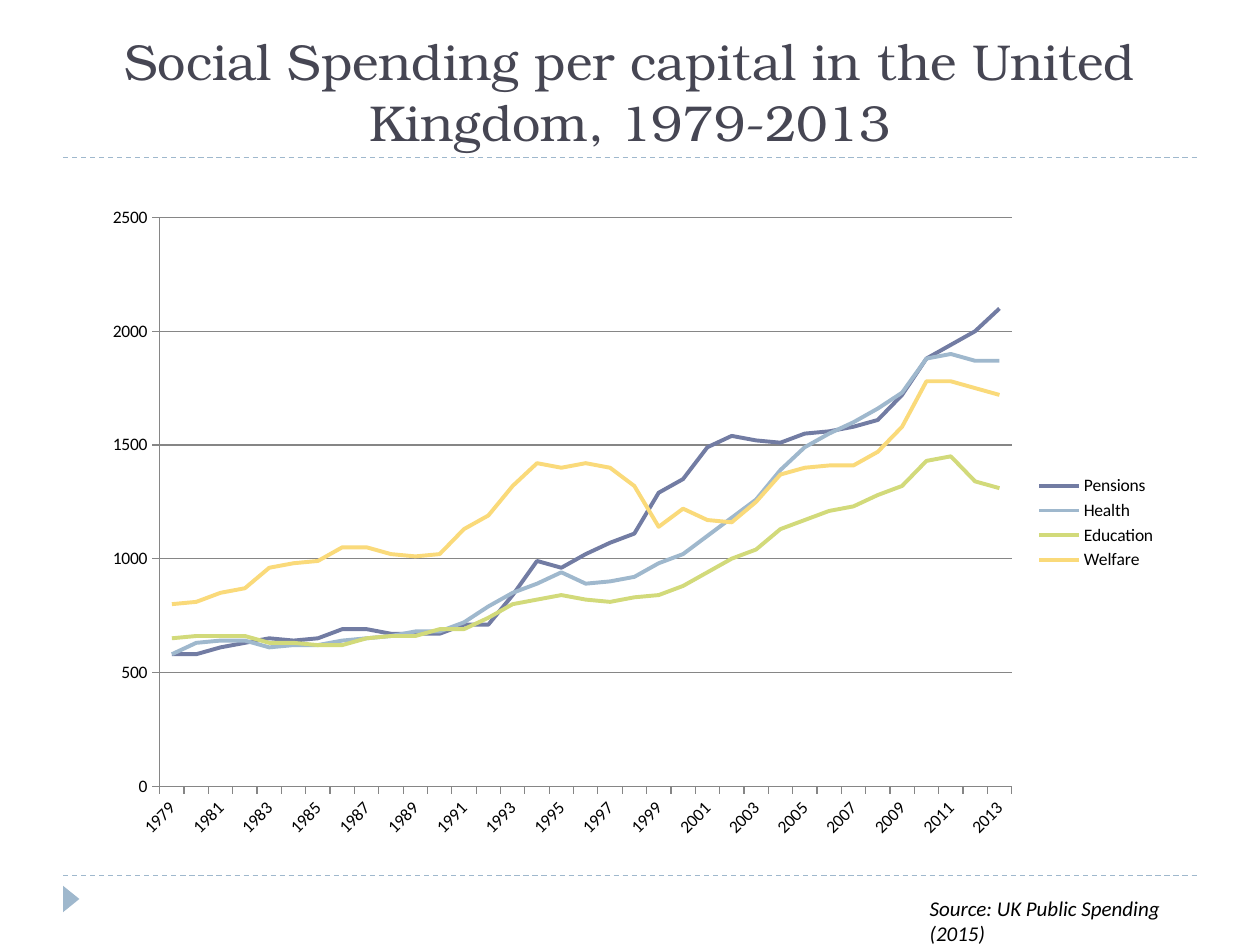
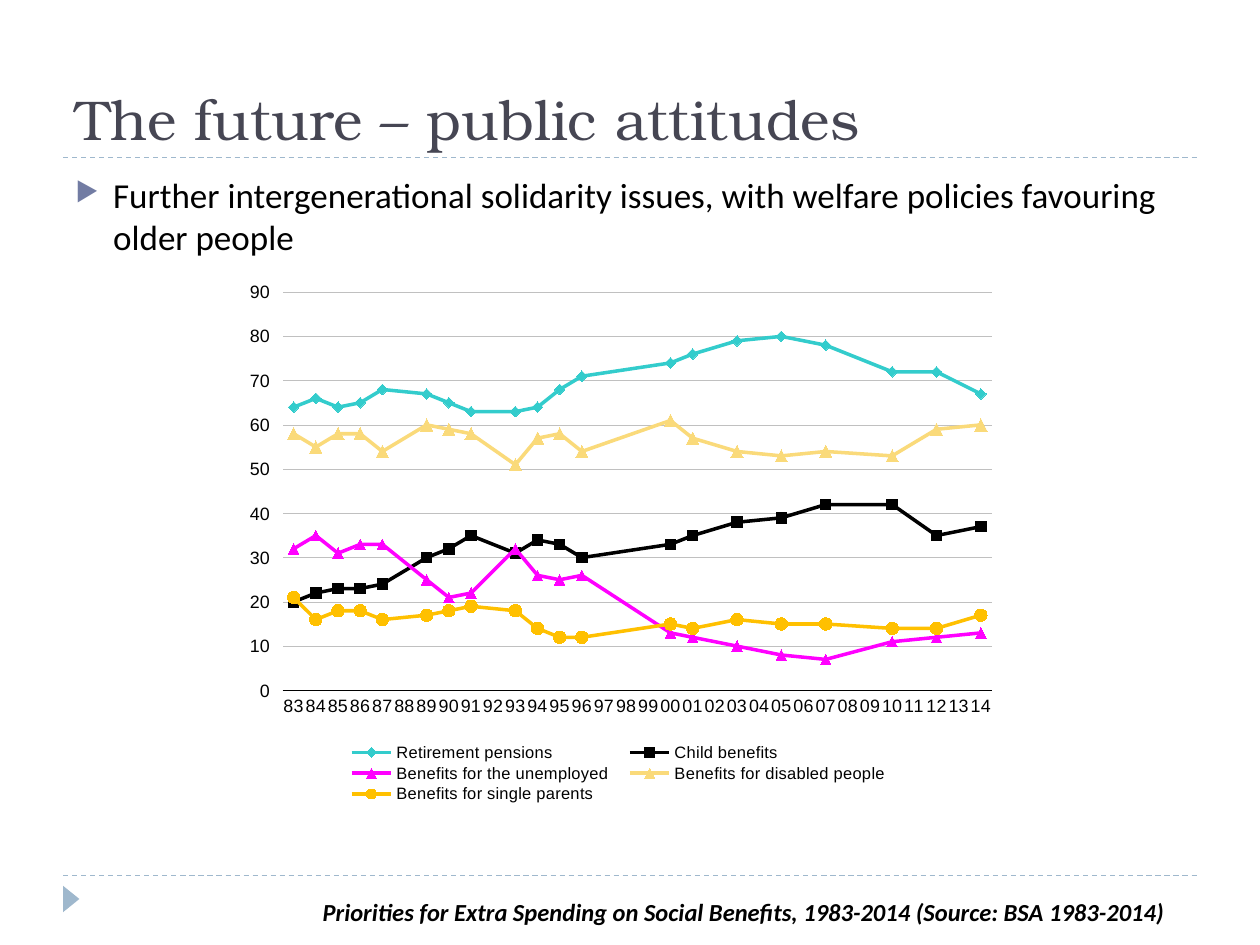
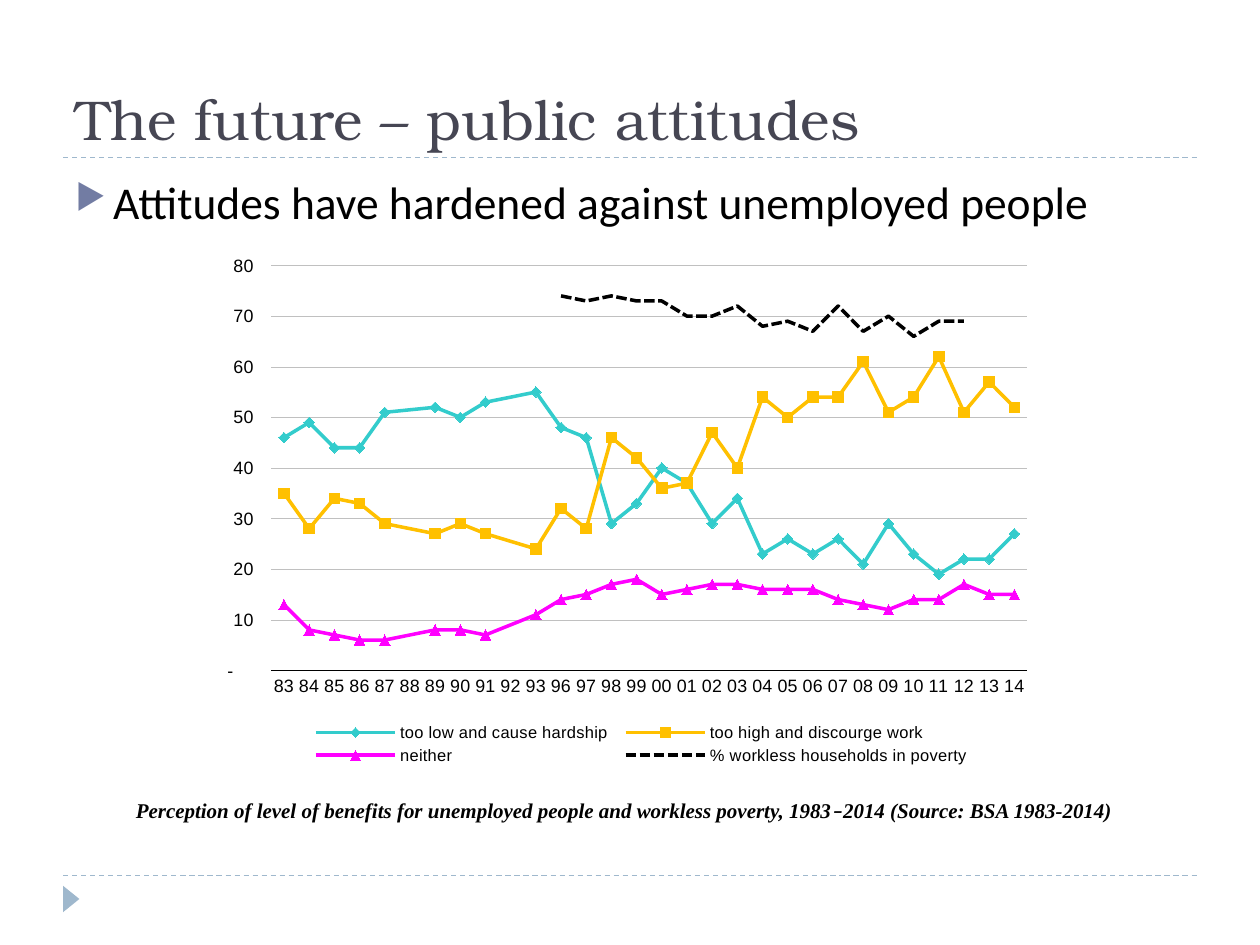
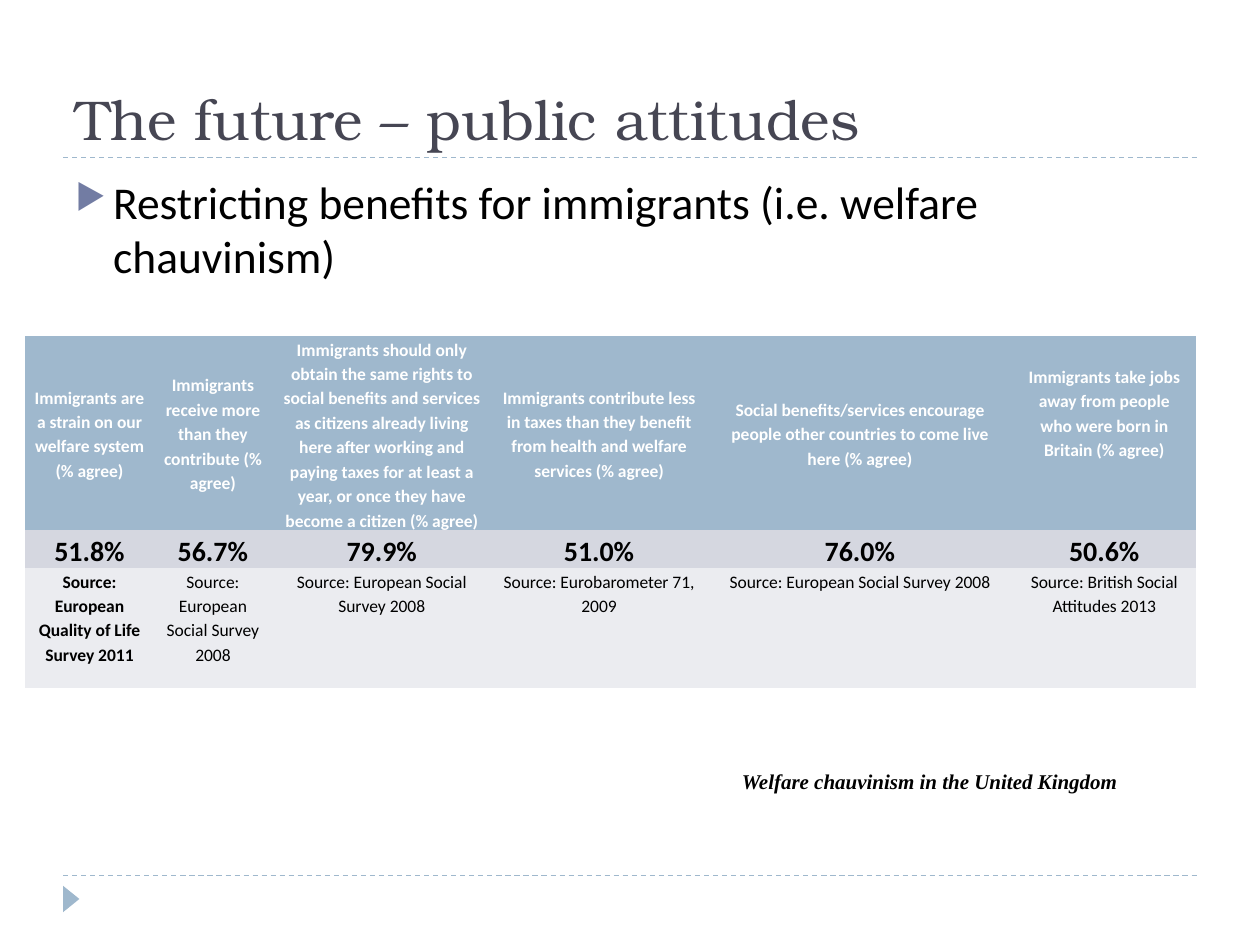
from dataclasses import dataclass

from lxml import etree
from pptx import Presentation
from pptx.chart.data import CategoryChartData
from pptx.dml.color import RGBColor
from pptx.enum.chart import XL_CHART_TYPE, XL_LEGEND_POSITION, XL_MARKER_STYLE, XL_TICK_MARK
from pptx.enum.dml import MSO_LINE
from pptx.enum.shapes import MSO_CONNECTOR, MSO_SHAPE
from pptx.enum.text import MSO_ANCHOR, PP_ALIGN
from pptx.oxml.ns import qn
from pptx.util import Inches, Pt

COLORS = {
    "title": "464653", "text": "000000", "white": "FFFFFF", "rule": "9FB8CD", "bullet": "727CA3",
    "axis": "868686", "grid": "C0C0C0", "indigo": "727CA3", "blue": "9FB8CD", "green": "D2DA7A",
    "sand": "FADA7A", "teal": "33CCCC", "black": "000000", "magenta": "FF00FF", "amber": "FFC000",
    "header row": "9FB8CD", "value row": "D5D7E0", "source row": "EBECF0",
}
TITLE_FONT, BODY_FONT, CHART_FONT, CAPTION_FONT = "TeX Gyre Bonum", "Calibri", "Arial", "Times New Roman"
ATTITUDES_TITLE = "The future – public attitudes"
COUNT_FORMAT = '_-* #,##0_-;\\-* #,##0_-;_-* "-"??_-;_-@_-'


@dataclass
class Box:
    left: float
    top: float
    width: float
    height: float

    def inches(self):
        return [Inches(value) for value in (self.left, self.top, self.width, self.height)]


PAGE = Box(0, 0, 10, 7.5)
TITLE = Box(0.5, 0.17, 9, 1.08)
BODY = Box(0.5, 1.33, 9, 5.4)

SPENDING_YEARS = [str(year) for year in range(1979, 2014)]
SPENDING = [
    ("Pensions", "indigo", None,
     [580, 580, 610, 630, 650, 640, 650, 690, 690, 670, 670, 670, 710, 710, 840, 990, 960, 1020,
      1070, 1110, 1290, 1350, 1490, 1540, 1520, 1510, 1550, 1560, 1580, 1610, 1720, 1880, 1940,
      2000, 2100]),
    ("Health", "blue", None,
     [580, 630, 640, 640, 610, 620, 620, 640, 650, 660, 680, 680, 720, 790, 850, 890, 940, 890,
      900, 920, 980, 1020, 1100, 1180, 1260, 1390, 1490, 1550, 1600, 1660, 1730, 1880, 1900,
      1870, 1870]),
    ("Education", "green", None,
     [650, 660, 660, 660, 630, 630, 620, 620, 650, 660, 660, 690, 690, 740, 800, 820, 840, 820,
      810, 830, 840, 880, 940, 1000, 1040, 1130, 1170, 1210, 1230, 1280, 1320, 1430, 1450, 1340,
      1310]),
    ("Welfare", "sand", None,
     [800, 810, 850, 870, 960, 980, 990, 1050, 1050, 1020, 1010, 1020, 1130, 1190, 1320, 1420,
      1400, 1420, 1400, 1320, 1140, 1220, 1170, 1160, 1250, 1370, 1400, 1410, 1410, 1470, 1580,
      1780, 1780, 1750, 1720]),
]

DIAMOND, SQUARE = (XL_MARKER_STYLE.DIAMOND, 6), (XL_MARKER_STYLE.SQUARE, 6)
TRIANGLE, LARGE_TRIANGLE = (XL_MARKER_STYLE.TRIANGLE, 6), (XL_MARKER_STYLE.TRIANGLE, 7)
CIRCLE = (XL_MARKER_STYLE.CIRCLE, 7)

PRIORITY_YEARS = [f"{year % 100:02}" for year in range(1983, 2015)]
SURVEYED = "83 84 85 86 87 89 90 91 93 94 95 96 00 01 03 05 07 10 12 14".split()


def by_year(values):
    """Spread survey values over all years, with None where no survey was made."""
    found = dict(zip(SURVEYED, values))
    return [found.get(year) for year in PRIORITY_YEARS]


PRIORITIES = [
    ("Retirement pensions", "teal", DIAMOND, by_year(
        [64, 66, 64, 65, 68, 67, 65, 63, 63, 64, 68, 71, 74, 76, 79, 80, 78, 72, 72, 67])),
    ("Child benefits", "black", SQUARE, by_year(
        [20, 22, 23, 23, 24, 30, 32, 35, 31, 34, 33, 30, 33, 35, 38, 39, 42, 42, 35, 37])),
    ("Benefits for the unemployed", "magenta", TRIANGLE, by_year(
        [32, 35, 31, 33, 33, 25, 21, 22, 32, 26, 25, 26, 13, 12, 10, 8, 7, 11, 12, 13])),
    ("Benefits for disabled people", "sand", LARGE_TRIANGLE, by_year(
        [58, 55, 58, 58, 54, 60, 59, 58, 51, 57, 58, 54, 61, 57, 54, 53, 54, 53, 59, 60])),
    ("Benefits for single parents", "amber", CIRCLE, by_year(
        [21, 16, 18, 18, 16, 17, 18, 19, 18, 14, 12, 12, 15, 14, 16, 15, 15, 14, 14, 17])),
]

PERCEPTION_YEARS = [year for year in PRIORITY_YEARS if year not in ("94", "95")]
PERCEPTIONS = [
    ("too low and cause hardship", "teal", DIAMOND,
     [46, 49, 44, 44, 51, None, 52, 50, 53, None, 55, 48, 46, 29, 33, 40, 37, 29, 34, 23, 26, 23,
      26, 21, 29, 23, 19, 22, 22, 27]),
    ("too high and discourge work", "amber", SQUARE,
     [35, 28, 34, 33, 29, None, 27, 29, 27, None, 24, 32, 28, 46, 42, 36, 37, 47, 40, 54, 50, 54,
      54, 61, 51, 54, 62, 51, 57, 52]),
    ("neither", "magenta", TRIANGLE,
     [13, 8, 7, 6, 6, None, 8, 8, 7, None, 11, 14, 15, 17, 18, 15, 16, 17, 17, 16, 16, 16, 14,
      13, 12, 14, 14, 17, 15, 15]),
    ("% workless households in poverty", "black", None,
     [None] * 11 + [74, 73, 74, 73, 73, 70, 70, 72, 68, 69, 67, 72, 67, 70, 66, 69, 69]
     + [None] * 2),
]

IMMIGRATION_COLUMNS = [
    (1.02, "Immigrants are a strain on our welfare system (% agree)", "51.8%",
     "Source: European Quality of Life Survey 2011"),
    (0.94, "Immigrants receive more than they contribute (% agree)", "56.7%",
     "Source: European Social Survey 2008"),
    (1.74, "Immigrants should only obtain the same rights to social benefits and services as "
     "citizens already living here after working and paying taxes for at least a year, or once "
     "they have become a citizen (% agree)", "79.9%", "Source: European Social Survey 2008"),
    (1.71, "Immigrants contribute less in taxes than they benefit from health and welfare "
     "services (% agree)", "51.0%", "Source: Eurobarometer 71, 2009"),
    (2.43, "Social benefits/services encourage people other countries to come live here "
     "(% agree)", "76.0%", "Source: European Social Survey 2008"),
    (1.45, "Immigrants take jobs away from people who were born in Britain (% agree)", "50.6%",
     "Source: British Social Attitudes 2013"),
]
# height, fill, text colour, size
IMMIGRATION_ROWS = [
    (1.52, "header row", "white", 10),
    (0.21, "value row", "text", 16),
    (0.95, "source row", "text", 10),
]


def color(name):
    return RGBColor.from_string(COLORS[name])


def set_font(font, name, size, tint="text", bold=False, italic=False):
    font.name, font.size, font.bold, font.italic = name, Pt(size), bold, italic
    font.color.rgb = color(tint)


def set_line(line, tint, width):
    line.color.rgb = color(tint)
    line.width = Pt(width)


def add_text(page, box, text, anchor=MSO_ANCHOR.TOP, align=PP_ALIGN.LEFT):
    """Add a wrapping text box and return its paragraph."""
    frame = page.shapes.add_textbox(*box.inches()).text_frame
    frame.word_wrap = True
    frame.vertical_anchor = anchor
    para = frame.paragraphs[0]
    para.text = text
    para.alignment = align
    return para


def add_rule(page, box, y):
    rule = page.shapes.add_connector(
        MSO_CONNECTOR.STRAIGHT, Inches(box.left + 0.5), Inches(box.top + y),
        Inches(box.left + box.width - 0.5), Inches(box.top + y))
    set_line(rule.line, "rule", 0.75)
    rule.line.dash_style = MSO_LINE.DASH
    etree.SubElement(rule._element.spPr, qn("a:effectLst"))


def add_page(deck, title, size=32, align=PP_ALIGN.LEFT):
    """Add a page with the shared rules, corner arrow and title."""
    page = deck.slides.add_slide(deck.slide_layouts[6])
    for y in (6.95, 1.25):
        add_rule(page, PAGE, y)
    arrow = page.shapes.add_shape(MSO_SHAPE.ISOSCELES_TRIANGLE, *Box(0.46, 7.07, 0.21, 0.13).inches())
    arrow.rotation = 90
    arrow.shadow.inherit = False
    arrow.fill.solid()
    arrow.fill.fore_color.rgb = color("rule")
    arrow.line.fill.background()
    para = add_text(page, TITLE, title, MSO_ANCHOR.BOTTOM, align)
    set_font(para.font, TITLE_FONT, size, "title")
    return page


def add_bullet(page, box, text, size):
    para = add_text(page, box, text)
    para.space_before = Pt(6)
    set_font(para.font, BODY_FONT, size)
    properties = para._p.get_or_add_pPr()
    properties.set("marL", str(Inches(0.3)))
    properties.set("indent", str(Inches(-0.3)))
    bullet = etree.Element(qn("a:buClr"))
    etree.SubElement(bullet, qn("a:srgbClr"), val=COLORS["bullet"])
    bullet_size = etree.Element(qn("a:buSzPct"), val="76000")
    mark = etree.Element(qn("a:buChar"), char="▶")
    at = list(properties).index(properties.find(qn("a:defRPr")))
    properties[at:at] = [bullet, bullet_size, mark]


def add_caption(page, box, pieces, size=12, bold=True, anchor=MSO_ANCHOR.TOP, align=PP_ALIGN.LEFT):
    """Add an italic caption from (text, font) pieces."""
    para = add_text(page, box, "", anchor, align)
    for text, font in pieces:
        span = para.add_run()
        span.text = text
        set_font(span.font, font, size, bold=bold, italic=True)


def make_layout(box, inner=False):
    """Build a manual chart layout from fractions of the chart's size."""
    layout = etree.Element(qn("c:layout"))
    manual = etree.SubElement(layout, qn("c:manualLayout"))
    settings = [("layoutTarget", "inner")] if inner else []
    settings += [("xMode", "edge"), ("yMode", "edge"), ("x", box.left), ("y", box.top),
                 ("w", box.width), ("h", box.height)]
    for tag, value in settings:
        etree.SubElement(manual, qn(f"c:{tag}"), val=str(value))
    return layout


def add_line_chart(page, box, years, series, plot_box, font, size, maximum, step, skip=1):
    data = CategoryChartData()
    data.categories = years
    for name, _, _, values in series:
        data.add_series(name, values)
    chart = page.shapes.add_chart(XL_CHART_TYPE.LINE_MARKERS, *box.inches(), data).chart
    chart.has_title = False
    set_font(chart.font, font, size)
    chart.plots[0].vary_by_categories = False

    value_axis, year_axis = chart.value_axis, chart.category_axis
    value_axis.minimum_scale, value_axis.maximum_scale, value_axis.major_unit = 0, maximum, step
    value_axis.has_major_gridlines = True
    value_axis.major_tick_mark = XL_TICK_MARK.OUTSIDE
    label_skip = etree.Element(qn("c:tickLblSkip"), val=str(skip))
    year_axis._element.find(qn("c:noMultiLvlLbl")).addprevious(label_skip)

    for line, (_, tint, marker, _) in zip(chart.plots[0].series, series):
        line.smooth = False
        set_line(line.format.line, tint, 2)
        if marker is None:
            line.marker.style = XL_MARKER_STYLE.NONE
            continue
        line.marker.style, line.marker.size = marker
        line.marker.format.fill.solid()
        line.marker.format.fill.fore_color.rgb = color(tint)
        line.marker.format.line.color.rgb = color(tint)

    chart.has_legend = True
    chart.legend.include_in_layout = False
    root = chart._chartSpace
    root.find(".//" + qn("c:dispBlanksAs")).set("val", "span")
    plot_area = root.find(".//" + qn("c:plotArea"))
    for layout in plot_area.findall(qn("c:layout")):
        plot_area.remove(layout)
    plot_area.insert(0, make_layout(plot_box, inner=True))
    return chart


def add_spending_chart(page, box):
    chart = add_line_chart(page, box, SPENDING_YEARS, SPENDING, Box(0.064, 0.034, 0.79, 0.868),
                           BODY_FONT, 10, 2500, 500, skip=2)
    chart.legend.position = XL_LEGEND_POSITION.RIGHT
    for line in (chart.value_axis.format.line, chart.category_axis.format.line,
                 chart.value_axis.major_gridlines.format.line):
        set_line(line, "axis", 0.75)
    chart.category_axis.major_tick_mark = XL_TICK_MARK.OUTSIDE
    chart.category_axis.tick_labels.font.size = Pt(10)
    chart.category_axis._element.find(".//" + qn("a:bodyPr")).set("rot", "-2700000")
    for line in chart.plots[0].series:
        line.format.line.width = Pt(2.25)


def add_survey_chart(page, box, years, series, plot_box, legend_box, maximum):
    chart = add_line_chart(page, box, years, series, plot_box, CHART_FONT, 10.2, maximum, 10)
    set_line(chart.value_axis.major_gridlines.format.line, "grid", 0.25)
    chart.value_axis.format.line.fill.background()
    set_line(chart.category_axis.format.line, "black", 0.25)
    chart.category_axis.major_tick_mark = XL_TICK_MARK.NONE
    chart.legend.position = XL_LEGEND_POSITION.BOTTOM
    set_font(chart.legend.font, CHART_FONT, 9.4)
    legend = chart.legend._element
    for layout in legend.findall(qn("c:layout")):
        legend.remove(layout)
    legend.find(qn("c:legendPos")).addnext(make_layout(legend_box))
    return chart


def add_immigration_table(page, box):
    table = page.shapes.add_table(
        len(IMMIGRATION_ROWS), len(IMMIGRATION_COLUMNS), *box.inches()).table
    plain_style = "{2D5ABB26-0587-4C30-8999-92F81FD0307C}"
    table._tbl.tblPr.find(qn("a:tableStyleId")).text = plain_style
    table.horz_banding = False
    for row, (height, fill, tint, size) in enumerate(IMMIGRATION_ROWS):
        table.rows[row].height = Inches(height)
        for column, (width, *texts) in enumerate(IMMIGRATION_COLUMNS):
            table.columns[column].width = Inches(width)
            cell = table.cell(row, column)
            cell.fill.solid()
            cell.fill.fore_color.rgb = color(fill)
            cell.margin_left = cell.margin_right = Inches(0.07)
            cell.margin_top = cell.margin_bottom = 0
            cell.vertical_anchor = MSO_ANCHOR.MIDDLE if row == 0 else MSO_ANCHOR.TOP
            para = cell.text_frame.paragraphs[0]
            para.text = texts[row]
            para.alignment = PP_ALIGN.CENTER
            para.line_spacing = 1.15
            set_font(para.font, BODY_FONT, size, tint, bold=row < 2 or column == 0)
    table.cell(0, len(IMMIGRATION_COLUMNS) - 1).margin_bottom = Inches(0.33)


def build_spending_page(deck):
    page = add_page(deck, "Social Spending per capital in the United Kingdom, 1979-2013", 28.8,
                    PP_ALIGN.CENTER)
    add_spending_chart(page, Box(0.72, 1.55, 8.56, 5.2))
    add_caption(page, Box(7.28, 7.06, 2.42, 0.3),
                [("Source: UK Public Spending (2015)", BODY_FONT)], bold=False)


def build_priorities_page(deck):
    page = add_page(deck, ATTITUDES_TITLE)
    add_bullet(page, BODY, "Further intergenerational solidarity issues, with welfare policies "
               "favouring older people", 20)
    add_survey_chart(page, Box(1.93, 2.18, 6.14, 4.21), PRIORITY_YEARS, PRIORITIES,
                     Box(0.051, 0.033, 0.917, 0.751), Box(0.12, 0.88, 0.73, 0.12), 90)
    add_caption(page, Box(1.06, 7.07, 9.69, 0.64),
                [("Priorities for Extra Spending on Social Benefits, 1983-2014 "
                  "(Source: BSA 1983-2014)", BODY_FONT)], 14, align=PP_ALIGN.CENTER)


def build_perceptions_page(deck):
    page = add_page(deck, ATTITUDES_TITLE)
    add_bullet(page, BODY, "Attitudes have hardened against unemployed people", 26)
    chart = add_survey_chart(page, Box(1.69, 1.86, 6.54, 4.28), PERCEPTION_YEARS, PERCEPTIONS,
                             Box(0.071, 0.058, 0.917, 0.751), Box(0.11, 0.9, 0.82, 0.09), 80)
    chart.value_axis.tick_labels.number_format = COUNT_FORMAT
    chart.value_axis.tick_labels.number_format_is_linked = False
    poverty = chart.plots[0].series[3]
    poverty.format.line.dash_style = MSO_LINE.SQUARE_DOT
    add_caption(page, Box(0.98, 6.28, 10, 0.3),
                [("Perception of level of benefits for unemployed people and workless poverty, "
                  "1983", CAPTION_FONT), ("–", BODY_FONT),
                 ("2014 (Source: BSA 1983-2014)", CAPTION_FONT)], anchor=MSO_ANCHOR.MIDDLE)


def build_immigration_page(deck):
    page = add_page(deck, ATTITUDES_TITLE)
    add_bullet(page, BODY, "Restricting benefits for immigrants (i.e. welfare chauvinism)", 26)
    add_immigration_table(page, Box(0.2, 2.67, 9.3, 3.14))
    add_caption(page, Box(5.79, 5.95, 10, 0.5),
                [("Welfare chauvinism in the United Kingdom", CAPTION_FONT)],
                anchor=MSO_ANCHOR.MIDDLE)


def main():
    deck = Presentation()
    deck.slide_width, deck.slide_height = Inches(PAGE.width), Inches(PAGE.height)
    build_spending_page(deck)
    build_priorities_page(deck)
    build_perceptions_page(deck)
    build_immigration_page(deck)
    deck.save("out.pptx")


if __name__ == "__main__":
    main()
